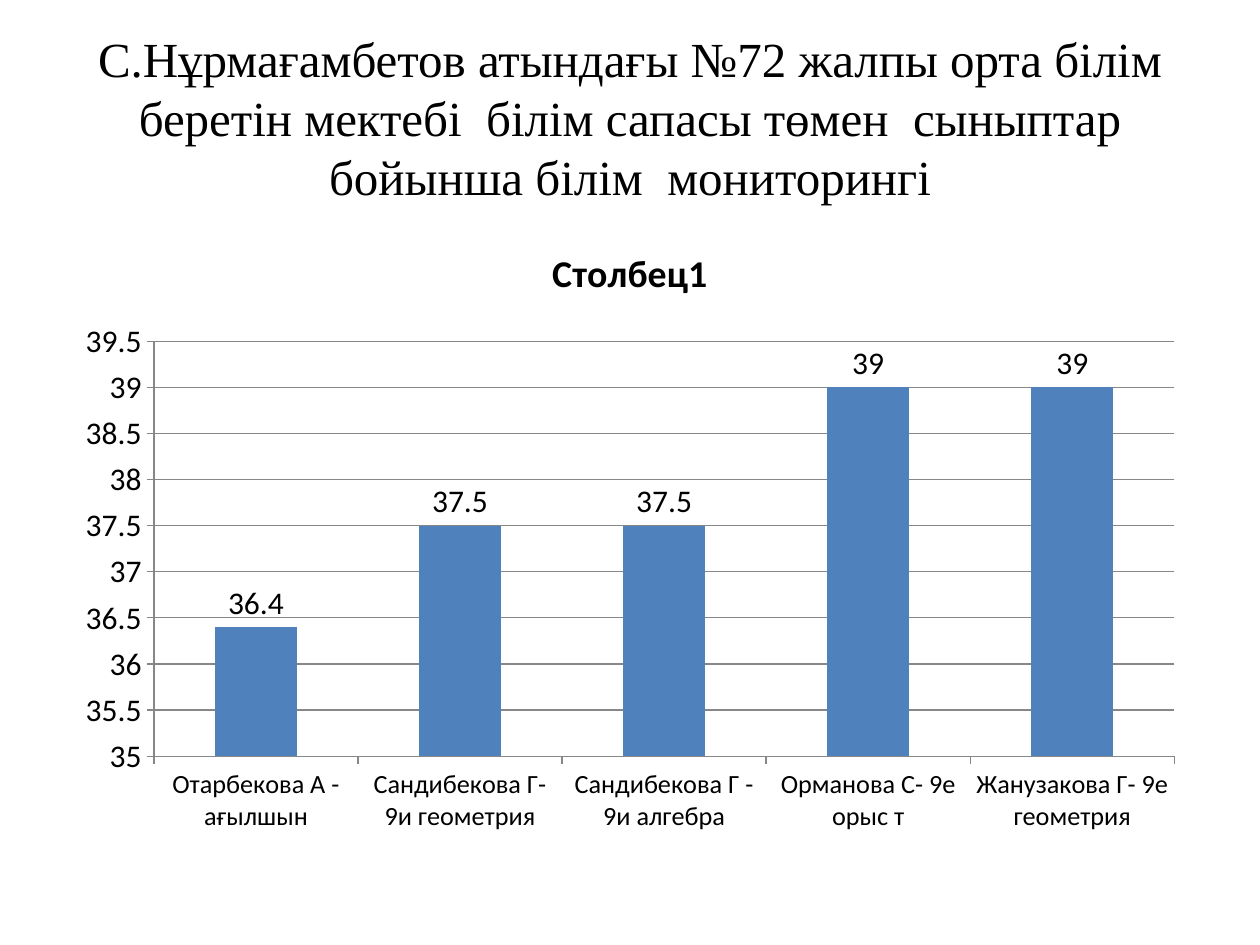
from pptx import Presentation
from pptx.chart.data import CategoryChartData
from pptx.dml.color import RGBColor
from pptx.enum import chart as ch, text
from pptx.util import Inches, Pt

TITLE = ("С.Нұрмағамбетов атындағы №72 жалпы орта білім беретін мектебі  "
         "білім сапасы төмен  сыныптар бойынша білім  мониторингі")
SERIES_NAME = "Столбец1"
SCORES = [
    ("Отарбекова А - ағылшын", 36.4),
    ("Сандибекова Г- 9и геометрия", 37.5),
    ("Сандибекова Г - 9и алгебра", 37.5),
    ("Орманова С- 9е орыс т", 39),
    ("Жанузакова Г- 9е геометрия", 39),
]
BLACK, BLUE, GRAY = "000000", "4F81BD", "878787"
LEFT, WIDTH = Inches(0.5), Inches(9)


def set_font(font, name, size, bold=False):
    font.name, font.size, font.bold = name, Pt(size), bold
    font.color.rgb = RGBColor.from_string(BLACK)


def set_line(line):
    line.color.rgb = RGBColor.from_string(GRAY)
    line.width = Pt(0.75)


def add_title(slide):
    box = slide.shapes.add_textbox(LEFT, Inches(0.3), WIDTH, Inches(1.25))
    frame = box.text_frame
    frame.word_wrap = True
    frame.vertical_anchor = text.MSO_ANCHOR.MIDDLE
    paragraph = frame.paragraphs[0]
    paragraph.text = TITLE
    paragraph.alignment = text.PP_ALIGN.CENTER
    set_font(paragraph.font, "Times New Roman", 28)


def add_score_chart(slide):
    data = CategoryChartData()
    data.categories = [label for label, _ in SCORES]
    data.add_series(SERIES_NAME, [score for _, score in SCORES])
    chart = slide.shapes.add_chart(
        ch.XL_CHART_TYPE.COLUMN_CLUSTERED,
        LEFT, Inches(1.75), WIDTH, Inches(4.95), data).chart
    set_font(chart.font, "Calibri", 18)
    chart.has_legend = False
    chart.has_title = True
    heading = chart.chart_title.text_frame.paragraphs[0]
    heading.text = SERIES_NAME
    set_font(heading.font, "Calibri", 21.6, bold=True)
    chart.chart_title.include_in_layout = False

    for axis, size in ((chart.category_axis, 15), (chart.value_axis, 18)):
        set_font(axis.tick_labels.font, "Calibri", size)
        set_line(axis.format.line)
        axis.major_tick_mark = ch.XL_TICK_MARK.OUTSIDE
    value_axis = chart.value_axis
    value_axis.minimum_scale, value_axis.maximum_scale = 35, 39.5
    value_axis.major_unit = 0.5
    value_axis.has_major_gridlines = True
    set_line(value_axis.major_gridlines.format.line)

    plot = chart.plots[0]
    plot.vary_by_categories = False
    plot.gap_width = 150
    fill = plot.series[0].format.fill
    fill.solid()
    fill.fore_color.rgb = RGBColor.from_string(BLUE)
    plot.has_data_labels = True
    labels = plot.data_labels
    labels.show_value = True
    labels.position = ch.XL_LABEL_POSITION.OUTSIDE_END
    set_font(labels.font, "Calibri", 18)


def main():
    presentation = Presentation()
    presentation.slide_width, presentation.slide_height = Inches(10), Inches(7.5)
    slide = presentation.slides.add_slide(presentation.slide_layouts[6])
    add_title(slide)
    add_score_chart(slide)
    presentation.save("out.pptx")


if __name__ == "__main__":
    main()
